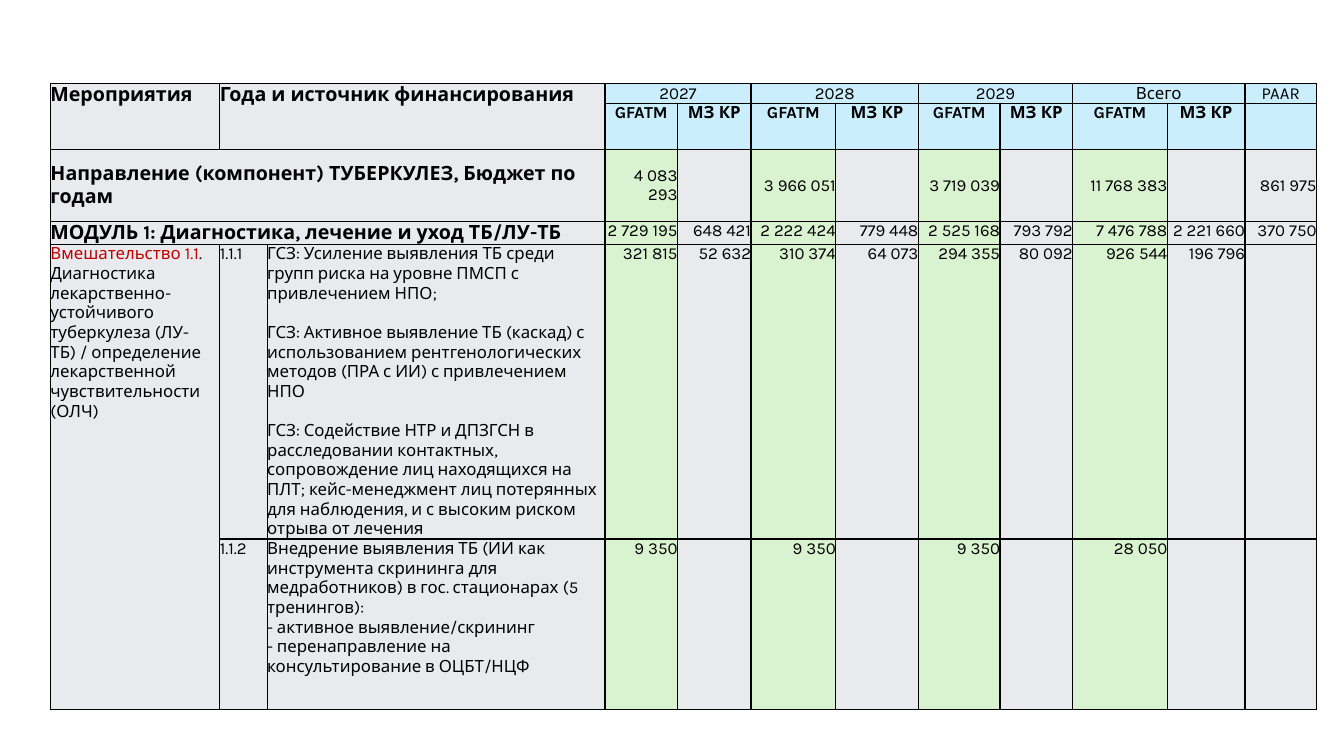
from dataclasses import dataclass

from lxml.etree import SubElement
from pptx import Presentation
from pptx.dml.color import RGBColor
from pptx.enum.text import MSO_ANCHOR, PP_ALIGN
from pptx.oxml.ns import qn
from pptx.util import Inches, Pt

BLACK = RGBColor(0x00, 0x00, 0x00)
RED = RGBColor(0xC0, 0x00, 0x00)
GREY = RGBColor(0xE8, 0xEA, 0xED)
BLUE = RGBColor(0xCA, 0xEE, 0xFB)
GREEN = RGBColor(0xD9, 0xF2, 0xD0)

FONT = "Karla"
COL_WIDTHS = [1.68, 0.47, 3.35, 0.72, 0.73, 0.84, 0.82, 0.81, 0.72, 0.94, 0.77, 0.71]
ROW_HEIGHTS = [0.19, 0.46, 0.71, 0.23, 2.92, 1.69]
HEADER_ROWS = 2
BUDGET_ROW = 2
FIRST_SUM = 3  # first column with amounts
LAST_COL = len(COL_WIDTHS) - 1


@dataclass
class Entry:
    row: int
    col: int
    text: str
    rows: int = 1
    cols: int = 1
    size: int = 12
    bold: bool = False
    align: PP_ALIGN = PP_ALIGN.LEFT
    gap: int = 0  # points between paragraphs
    red_lead: str = ""


LABELS = [
    Entry(0, 0, "Мероприятия", rows=2, size=14, bold=True),
    Entry(0, 1, "Года и источник финансирования", rows=2, cols=2, size=14, bold=True),
    Entry(2, 0, "Направление (компонент) ТУБЕРКУЛЕЗ, Бюджет по годам", cols=3, size=14, bold=True),
    Entry(3, 0, "МОДУЛЬ 1: Диагностика, лечение и уход ТБ/ЛУ-ТБ", cols=3, size=14, bold=True),
    Entry(4, 0, ". Диагностика лекарственно-устойчивого туберкулеза (ЛУ-ТБ) / определение "
          "лекарственной чувствительности (ОЛЧ)", rows=2, red_lead="Вмешательство 1.1"),
    Entry(4, 1, "1.1.1"),
    Entry(4, 2, "ГСЗ: Усиление выявления ТБ среди групп риска на уровне ПМСП с привлечением НПО;\n"
          "ГСЗ: Активное выявление ТБ (каскад) с использованием рентгенологических методов "
          "(ПРА с ИИ) с привлечением НПО\n"
          "ГСЗ: Содействие НТР и ДПЗГСН в расследовании контактных, сопровождение лиц "
          "находящихся на ПЛТ; кейс-менеджмент лиц потерянных для наблюдения, и с высоким "
          "риском отрыва от лечения", gap=14),
    Entry(5, 1, "1.1.2"),
    Entry(5, 2, "Внедрение выявления ТБ (ИИ как инструмента скрининга для медработников) "
          "в гос. стационарах (5 тренингов):\n"
          "- активное выявление/скрининг\n"
          "- перенаправление на консультирование в ОЦБТ/НЦФ"),
]
PERIODS = ["2027", "2028", "2029", "Всего"]
SOURCES = ["GFATM", "МЗ КР"]
AMOUNTS = {
    2: ["4 083 293", "", "3 966 051", "", "3 719 039", "", "11 768 383", "", "861 975"],
    3: ["2 729 195", "648 421", "2 222 424", "779 448", "2 525 168", "793 792",
        "7 476 788", "2 221 660", "370 750"],
    4: ["321 815", "52 632", "310 374", "64 073", "294 355", "80 092", "926 544", "196 796"],
    5: ["9 350", "", "9 350", "", "9 350", "", "28 050"],
}


def all_entries() -> list[Entry]:
    """Labels, period headings and amounts of the whole table."""
    entries = list(LABELS)
    for i, period in enumerate(PERIODS):
        col = FIRST_SUM + 2 * i
        entries.append(Entry(0, col, period, cols=2, align=PP_ALIGN.CENTER))
        for j, source in enumerate(SOURCES):
            entries.append(Entry(1, col + j, source, bold=True, align=PP_ALIGN.CENTER))
    entries.append(Entry(0, LAST_COL, "PAAR", align=PP_ALIGN.CENTER))
    for row, amounts in AMOUNTS.items():
        for col, amount in enumerate(amounts, FIRST_SUM):
            if amount:
                entries.append(Entry(row, col, amount, align=PP_ALIGN.RIGHT))
    return entries


def cell_fill(row: int, col: int) -> RGBColor:
    if col < FIRST_SUM:
        return GREY
    if row < HEADER_ROWS:
        return BLUE
    is_grant = col < LAST_COL and (col - FIRST_SUM) % 2 == 0
    return GREEN if is_grant else GREY


def style_cell(cell, fill: RGBColor) -> None:
    cell.margin_left = cell.margin_right = cell.margin_top = cell.margin_bottom = 0
    tcPr = cell._tc.get_or_add_tcPr()
    for side in ("a:lnL", "a:lnR", "a:lnT", "a:lnB"):
        line = SubElement(tcPr, qn(side), w=str(Pt(1)))
        SubElement(SubElement(line, qn("a:solidFill")), qn("a:srgbClr"), val=str(BLACK))
    cell.fill.solid()
    cell.fill.fore_color.rgb = fill


def write_entry(table, entry: Entry) -> None:
    cell = table.cell(entry.row, entry.col)
    if entry.rows > 1 or entry.cols > 1:
        cell.merge(table.cell(entry.row + entry.rows - 1, entry.col + entry.cols - 1))
    if entry.row == BUDGET_ROW:
        cell.vertical_anchor = MSO_ANCHOR.MIDDLE
    tf = cell.text_frame
    tf.text = entry.red_lead or entry.text
    if entry.red_lead:
        tf.paragraphs[0].add_run().text = entry.text
    for i, p in enumerate(tf.paragraphs):
        p.alignment = entry.align
        if i and entry.gap:
            p.space_before = Pt(entry.gap)
        for r in p.runs:
            r.font.name = FONT
            r.font.size = Pt(entry.size)
            r.font.bold = entry.bold
            r.font.color.rgb = BLACK
    if entry.red_lead:
        tf.paragraphs[0].runs[0].font.color.rgb = RED


def main() -> None:
    prs = Presentation()
    prs.slide_width, prs.slide_height = Inches(13.33), Inches(7.5)
    s = prs.slides.add_slide(prs.slide_layouts[6])

    # Table grid
    table = s.shapes.add_table(
        len(ROW_HEIGHTS), len(COL_WIDTHS), Inches(0.5), Inches(0.83),
        Inches(sum(COL_WIDTHS)), Inches(sum(ROW_HEIGHTS))).table
    table.first_row = table.horz_banding = False
    for column, width in zip(table.columns, COL_WIDTHS):
        column.width = Inches(width)
    for row, height in zip(table.rows, ROW_HEIGHTS):
        row.height = Inches(height)

    # Fills and borders
    for i, row in enumerate(table.rows):
        for j, cell in enumerate(row.cells):
            style_cell(cell, cell_fill(i, j))

    # Wording and amounts
    for entry in all_entries():
        write_entry(table, entry)

    prs.save("out.pptx")


if __name__ == "__main__":
    main()
